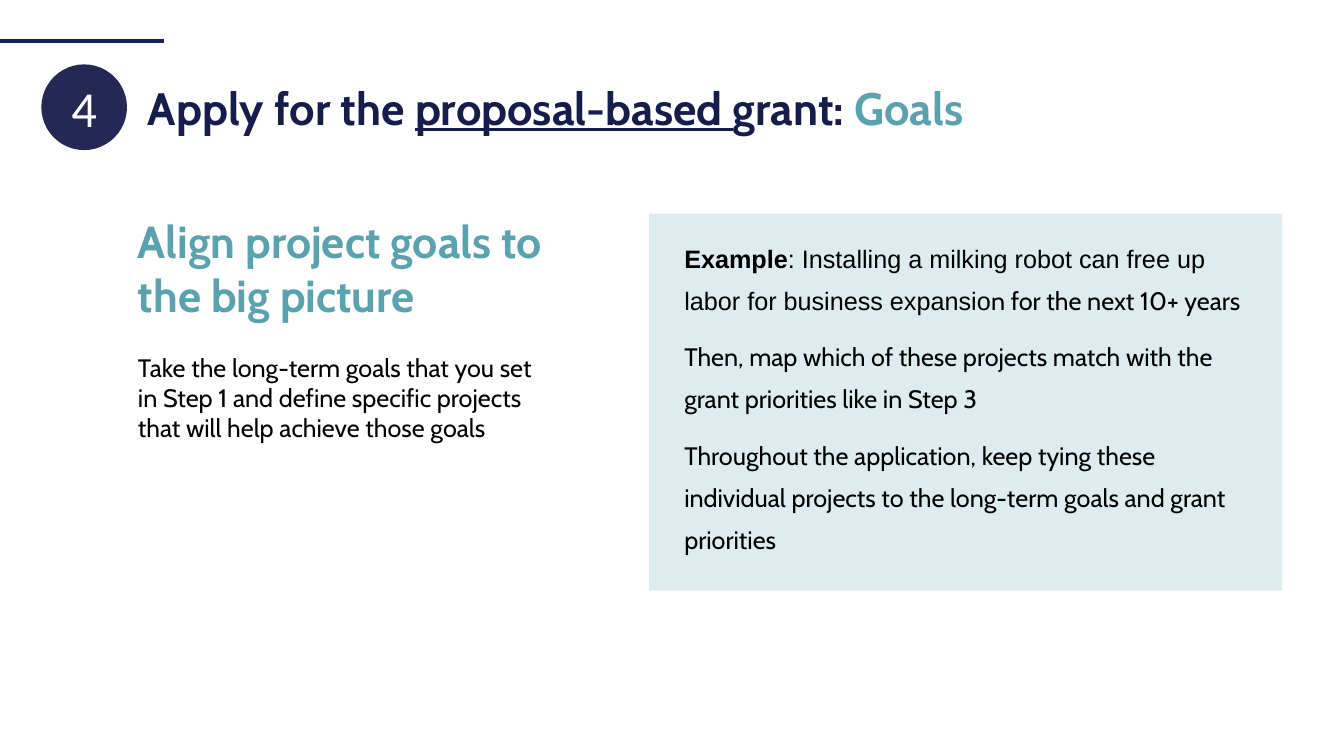
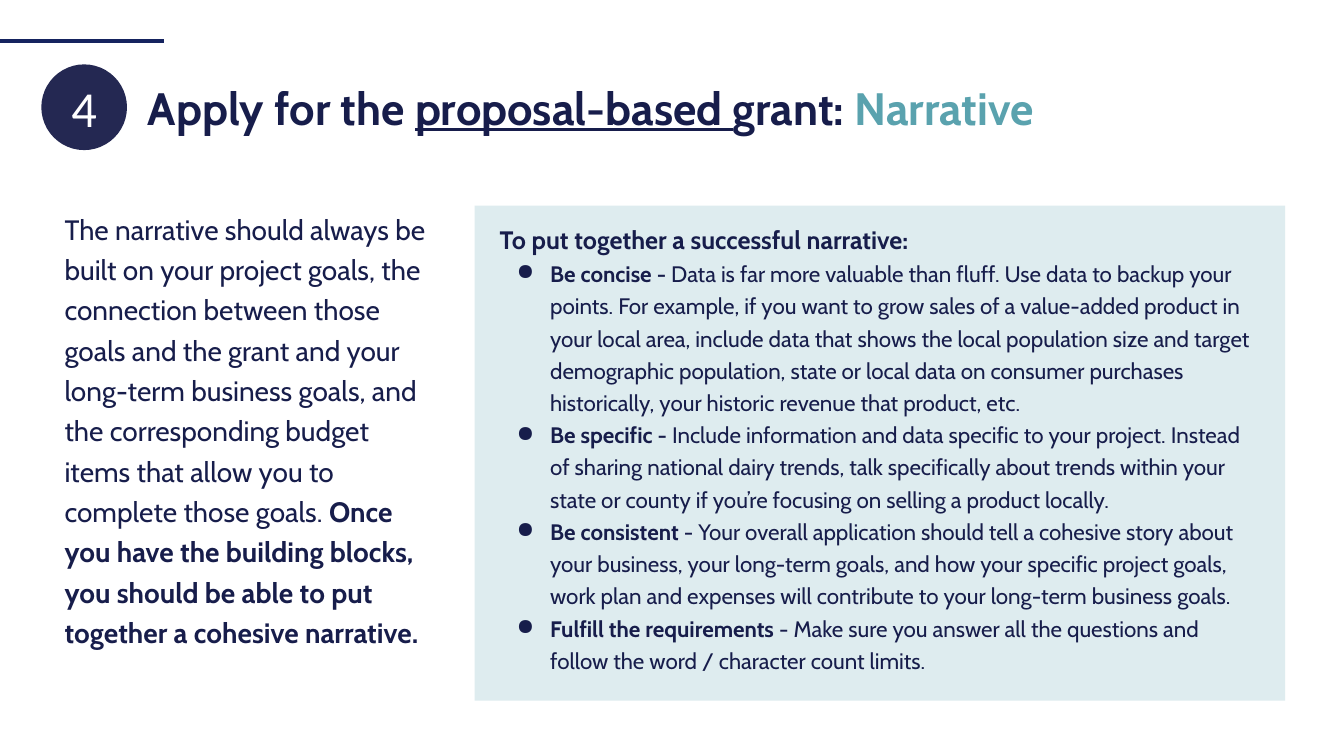
from lxml.etree import SubElement
from pptx import Presentation
from pptx.dml.color import RGBColor
from pptx.enum.shapes import MSO_CONNECTOR as CONN, MSO_SHAPE as SHAPE
from pptx.enum.text import MSO_ANCHOR as ANCHOR, PP_ALIGN as ALIGN
from pptx.oxml.ns import qn
from pptx.util import Pt

NAVY, TEAL, PALE = "171D4B", "5AA2AE", "DEECEF"
RULE, BADGE, BLACK, WHITE = "15235F", "242852", "000000", "FFFFFF"
BOLD = {"bold": True}
TITLE = {"name": "Cabin", "size": Pt(32.4), "bold": True, "color": NAVY}
HEADING = {"name": "Cabin", "size": Pt(32), "bold": True, "color": TEAL}
BODY = {"name": "Cabin", "size": Pt(18), "color": BLACK}
NAVY_BODY = {**BODY, "color": NAVY}
LEAD = {**NAVY_BODY, "size": Pt(20)}
POINT = {**NAVY_BODY, "size": Pt(16)}

GOAL_STEPS = [
    [("Example", {"name": "Arial", "bold": True}),
     (": Installing a milking robot can free up labor for business expansio", {"name": "Arial"}),
     ("n for the next 10+ years", {})],
    [("Then, map which of these projects match with the grant priorities like in Step 3", {})],
    [("Throughout the application, keep tying these individual projects to the "
      "long-term goals and grant priorities", {})],
]
NARRATIVE_TIPS = [
    ("Be concise - ",
     "Data is far more valuable than fluff. Use data to backup your points. For example, "
     "if you want to grow sales of a value-added product in your local area, include data "
     "that shows the local population size and target demographic population, state or "
     "local data on consumer purchases historically, your historic revenue that product, etc."),
    ("Be specific - ",
     "Include information and data specific to your project. Instead of sharing national "
     "dairy trends, talk specifically about trends within your state or county if you’re "
     "focusing on selling a product locally."),
    ("Be consistent ",
     "- Your overall application should tell a cohesive story about your business, your "
     "long-term goals, and how your specific project goals, work plan and expenses will "
     "contribute to your long-term business goals."),
    ("Fulfill the requirements",
     " - Make sure you answer all the questions and follow the word / character count limits."),
]


def rgb(color):
    return RGBColor.from_string(color)


def set_all(target, values):
    for key, value in values.items():
        setattr(target, key, value)


def add_runs(p, style, runs):
    for text, changes in runs:
        r = p.add_run()
        r.text = text
        values = {**style, **changes}
        r.font.color.rgb = rgb(values.pop("color"))
        set_all(r.font, values)


def add_bullet(p, color):
    pPr = p._p.get_or_add_pPr()
    pPr.set("marL", str(Pt(36)))
    pPr.set("indent", str(-Pt(24)))
    SubElement(SubElement(pPr, qn("a:buClr")), qn("a:srgbClr"), val=color)
    SubElement(pPr, qn("a:buChar"), char="●")


def fill_text(tf, paragraphs, margins=(7.2, 3.6), anchor=ANCHOR.TOP):
    side, end = map(Pt, margins)
    set_all(tf, {"word_wrap": True, "vertical_anchor": anchor,
                 "margin_left": side, "margin_right": side,
                 "margin_top": end, "margin_bottom": end})
    for i, (style, runs, layout) in enumerate(paragraphs):
        p = tf.add_paragraph() if i else tf.paragraphs[0]
        layout = dict(layout)
        bullet = layout.pop("bullet", None)
        set_all(p, layout)
        if bullet:
            add_bullet(p, bullet)
        add_runs(p, style, runs)


def add_text(s, box, paragraphs, **options):
    fill_text(s.shapes.add_textbox(*map(Pt, box)).text_frame, paragraphs, **options)


def add_block(s, kind, box, color):
    sp = s.shapes.add_shape(kind, *map(Pt, box))
    sp.shadow.inherit = False
    sp.fill.solid()
    sp.fill.fore_color.rgb = rgb(color)
    sp.line.fill.background()
    return sp


def add_rule(s):
    line = s.shapes.add_connector(CONN.STRAIGHT, 0, Pt(29.5), Pt(116.9), Pt(29.5))
    line.line.color.rgb = rgb(RULE)
    line.line.width = Pt(3)
    SubElement(line._element.spPr, qn("a:effectLst"))


def add_step_slide(prs, topic, panel):
    s = prs.slides.add_slide(prs.slide_layouts[6])
    add_rule(s)
    add_block(s, SHAPE.RECTANGLE, panel, PALE)
    add_text(s, (98.6, 52.6, 819.4, 47.5),
             [(TITLE, [("Apply for the ", {}), ("proposal-based ", {"underline": True}),
                       ("grant: ", {}), (topic, {"color": TEAL})], {})],
             anchor=ANCHOR.MIDDLE)
    badge = add_block(s, SHAPE.OVAL, (29.5, 46, 61.2, 61.2), BADGE)
    number = {"name": "Calibri", "size": Pt(36), "color": WHITE}
    fill_text(badge.text_frame, [(number, [("4", {})], {"alignment": ALIGN.CENTER})],
              margins=(0, 0), anchor=ANCHOR.MIDDLE)
    return s


def add_goals(prs):
    s = add_step_slide(prs, "Goals", (463.7, 152.6, 452.2, 269.3))
    add_text(s, (98.6, 152.6, 293, 175), [
        (HEADING, [("Align project goals to the big picture", {})], {}),
        (BODY, [("Take the long-term goals that you set in Step 1 and define specific "
                 "projects that will help achieve those goals", {})],
         {"space_before": Pt(22)}),
    ], margins=(0, 0))
    add_text(s, (481.7, 161.3, 426.2, 239), [
        (BODY, runs, {"line_spacing": 1.4, "space_before": Pt(10 if i else 0)})
        for i, runs in enumerate(GOAL_STEPS)])


def add_narrative(prs):
    s = add_step_slide(prs, "Narrative", (339.1, 146.9, 578.9, 353.5))
    spaced = {"line_spacing": 1.2}
    add_text(s, (46.1, 146.9, 262.8, 330), [
        (LEAD, [("The narrative should always be built on your project goals, the connection "
                 "between those goals and the grant and your long-term business goals, and the "
                 "corresponding budget items that allow you to complete those goals. ", {}),
                ("Once you have the building blocks, you should be able to put together a "
                 "cohesive narrative.", BOLD)], spaced),
    ], margins=(0, 0))
    intro = (NAVY_BODY, [("To put together a successful narrative:", BOLD)], spaced)
    tips = [(POINT, [(label, BOLD), (advice, {})], {**spaced, "bullet": NAVY})
            for label, advice in NARRATIVE_TIPS]
    add_text(s, (349.9, 152.6, 557.3, 334.8), [intro, *tips])


def main():
    prs = Presentation()
    prs.slide_width, prs.slide_height = Pt(960), Pt(540)
    add_goals(prs)
    add_narrative(prs)
    prs.save("out.pptx")


if __name__ == "__main__":
    main()
